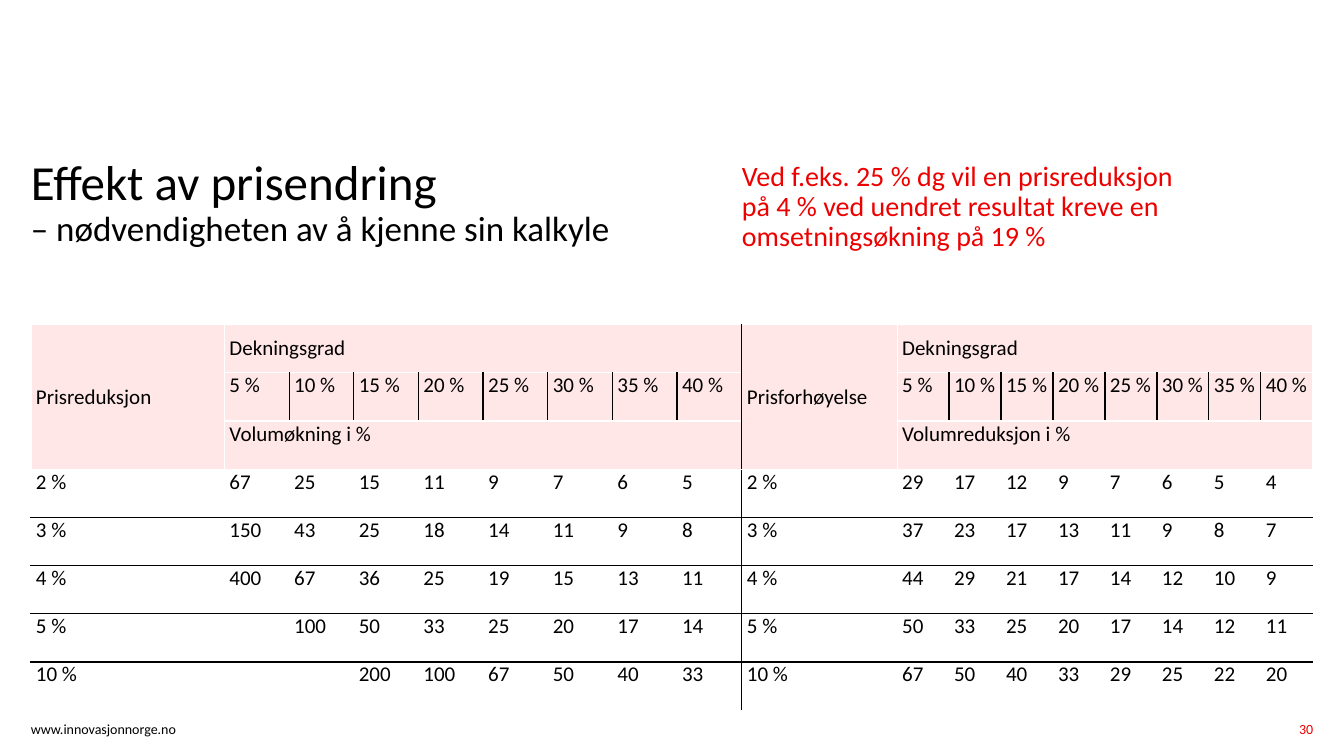
from dataclasses import dataclass

from lxml import etree
from pptx import Presentation
from pptx import util as u
from pptx.dml import color
from pptx.enum import text
from pptx.oxml import ns


@dataclass(frozen=True)
class Theme:
    font: str = "Calibri"
    ink: str = "000000"
    red: str = "ED0000"
    pale: str = "FFE7E7"
    white: str = "FFFFFF"
    head: int = 35
    sub: int = 25
    lead: int = 20
    body: int = 15
    small: int = 10


class Page:
    """One slide; every length is a percentage of its width or height."""

    def __init__(self, deck, theme):
        self.theme = theme
        self.wide, self.high = deck.slide_width, deck.slide_height
        self.slide = deck.slides.add_slide(deck.slide_layouts[6])

    def across(self, share):
        return round(self.wide * share / 100)

    def down(self, share):
        return round(self.high * share / 100)

    def style(self, font, size, tint):
        font.name, font.size = self.theme.font, u.Pt(size)
        font.color.rgb = color.RGBColor.from_string(tint)

    def label(self, box, lines, tint, space=1.0, align=text.PP_ALIGN.LEFT):
        """Lines are (words, size) pairs, parted by line breaks."""
        left, top, width, height = box
        frame = self.slide.shapes.add_textbox(
            self.across(left), self.down(top),
            self.across(width), self.down(height)).text_frame
        frame.word_wrap = True
        frame.margin_left = frame.margin_right = 0
        frame.margin_top = frame.margin_bottom = 0
        para = frame.paragraphs[0]
        para.line_spacing, para.alignment = space, align
        self.style(para.font, lines[0][1], tint)
        for i, (words, size) in enumerate(lines):
            if i:
                para.add_line_break()
            run = para.add_run()
            run.text = words
            if size != lines[0][1]:
                run.font.size = u.Pt(size)

    def edge(self, cell, side, tint):
        props = cell._tc.get_or_add_tcPr()
        line = etree.SubElement(props, ns.qn(f"a:ln{side}"), w=str(u.Pt(1)))
        fill = etree.SubElement(line, ns.qn("a:solidFill"))
        etree.SubElement(fill, ns.qn("a:srgbClr"), val=tint)

    def fill(self, cell, words, row, col, last, rule):
        """Style one cell; dark edges follow from its row and column."""
        th = self.theme
        rates = row == 1
        dark = {
            "L": (rates and col > 1) or (rule and col == 0),
            "R": rates and 0 < col < last,
            "T": row > 3,
            "B": 3 <= row < 7,
        }
        for side, on in dark.items():
            self.edge(cell, side, th.ink if on else th.white)
        if row < 3:
            cell.fill.solid()
            cell.fill.fore_color.rgb = color.RGBColor.from_string(th.pale)
        else:
            cell.fill.background()
        cell.margin_left = cell.margin_right = u.Inches(0.05)
        cell.margin_top = cell.margin_bottom = 0
        cell.vertical_anchor = (text.MSO_ANCHOR.MIDDLE if row == 0
                                else text.MSO_ANCHOR.TOP)
        cell.text = words
        self.style(cell.text_frame.paragraphs[0].font, th.body, th.ink)

    def table(self, box, first, rows, rule):
        """First is the width of the label column; the rest share alike."""
        left, top, width, height = box
        count, last = len(rows), len(rows[0]) - 1
        grid = self.slide.shapes.add_table(
            count, last + 1, self.across(left), self.down(top),
            self.across(width), self.down(height)).table
        grid.first_row = grid.horz_banding = False
        for i, col in enumerate(grid.columns):
            col.width = self.across(
                first if i == 0 else (width - first) / last)
        for r, row in enumerate(rows):
            for c, words in enumerate(row):
                self.fill(grid.cell(r, c), words, r, c, last, rule)
        # Label spans three rows, both headings span the rates
        grid.cell(0, 0).merge(grid.cell(2, 0))
        for r in (0, 2):
            grid.cell(r, 1).merge(grid.cell(r, last))


RATES = [f"{n} %" for n in range(5, 45, 5)]
STEPS = [2, 3, 4, 5, 10]


def layout(label, effect, values):
    """Three heading rows, then one row for each price step."""
    blank = [""] * (len(RATES) - 1)
    rows = [[label, "Dekningsgrad", *blank], ["", *RATES],
            ["", effect, *blank]]
    for step, line in zip(STEPS, values):
        cells = [str(n) for n in line]
        pad = [""] * (len(RATES) - len(cells))
        rows.append([f"{step} %", *pad, *cells])
    return rows


CUTS = [
    [67, 25, 15, 11, 9, 7, 6, 5],
    [150, 43, 25, 18, 14, 11, 9, 8],
    [400, 67, 36, 25, 19, 15, 13, 11],
    [100, 50, 33, 25, 20, 17, 14],
    [200, 100, 67, 50, 40, 33],
]
RISES = [
    [29, 17, 12, 9, 7, 6, 5, 4],
    [37, 23, 17, 13, 11, 9, 8, 7],
    [44, 29, 21, 17, 14, 12, 10, 9],
    [50, 33, 25, 20, 17, 14, 12, 11],
    [67, 50, 40, 33, 29, 25, 22, 20],
]


def main():
    deck = Presentation()
    deck.slide_width, deck.slide_height = u.Inches(13.33), u.Inches(7.5)
    th = Theme()
    page = Page(deck, th)
    left, split, right = 2.3, 55.2, 97.7

    # Title and example
    page.label((left, 20.93, 51, 18.8), [
        ("Effekt av prisendring", th.head),
        ("– nødvendigheten av å kjenne sin kalkyle", th.sub)], th.ink, 0.9)
    page.label((split, 21.47, 40.2, 18.8), [
        ("Ved f.eks. 25 % dg vil en prisreduksjon", th.lead),
        ("på 4 % ved uendret resultat kreve en omsetningsøkning på 19 %",
         th.lead)], th.red, 0.9)

    # Price cuts and price rises
    top, height = 42.95, 51
    page.table((left, top, split - left, height), 14.4,
               layout("Prisreduksjon", "Volumøkning i %", CUTS), False)
    page.table((split, top, right - split, height), 11.55,
               layout("Prisforhøyelse", "Volumreduksjon i %", RISES), True)

    # Footer
    page.label((left, 95.33, 21.4, 2.5),
               [("www.innovasjonnorge.no", th.small)], th.ink)
    page.label((right - 8.1, 95.33, 8.1, 3.2), [("30", th.small)], th.red,
               align=text.PP_ALIGN.RIGHT)

    deck.save("out.pptx")


if __name__ == "__main__":
    main()
